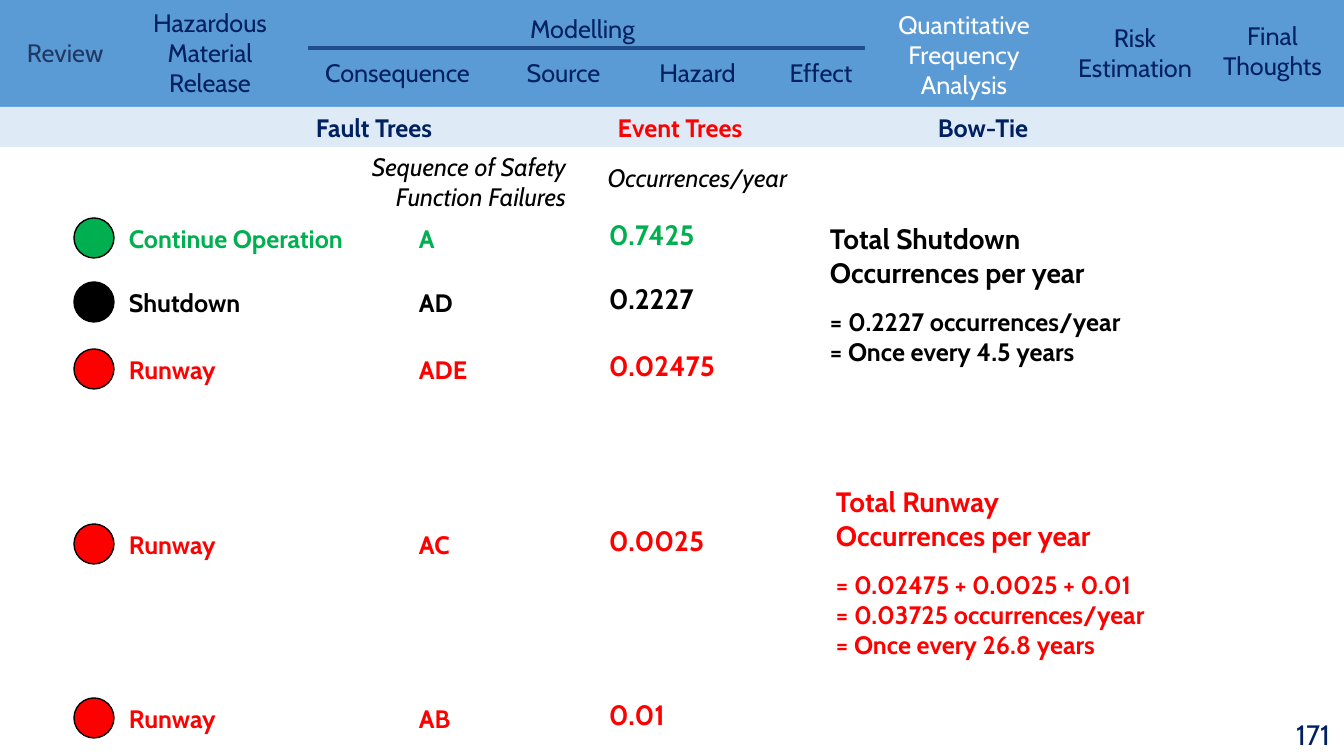
import pptx
import pptx.dml.color
import pptx.enum.shapes
import pptx.enum.text
import pptx.oxml
import pptx.util
import lxml.etree

NAVY, GREEN, BLACK, RED, WHITE = "002060", "00B050", "000000", "FF0000", "FFFFFF"
SLIDE_WIDTH, SLIDE_HEIGHT = 1344, 756
EMU_PER_PX = 12192000 / SLIDE_WIDTH

MENU = [
    ("Review", (17, 32, 112, 40), "203864", "LEFT"),
    ("Hazardous Material Release", (128, 2, 164, 101), NAVY, "CENTER"),
    ("Modelling", (308, 8, 549, 40), NAVY, "CENTER"),
    ("Consequence", (308, 52, 179, 40), NAVY, "CENTER"),
    ("Source", (463, 52, 201, 40), NAVY, "CENTER"),
    ("Hazard", (615, 52, 165, 40), NAVY, "CENTER"),
    ("Effect", (733, 52, 176, 40), NAVY, "CENTER"),
    ("Quantitative Frequency Analysis", (876, 4, 176, 97), WHITE, "CENTER"),
    ("Risk Estimation", (1047, 17, 176, 70), NAVY, "CENTER"),
    ("Final Thoughts", (1194, 15, 157, 75), NAVY, "CENTER"),
]
TABS = [("Fault Trees", 374, NAVY), ("Event Trees", 680, RED), ("Bow-Tie", 983, NAVY)]
HEADINGS = [
    ("Sequence of Safety Function Failures", (330, 146, 246, 72)),
    ("Occurrences/year", (551, 157, 246, 40)),
]
OUTCOMES = [
    (218, "Continue Operation", "A", "0.7425", GREEN),
    (282, "Shutdown", "AD", "0.2227", BLACK),
    (349, "Runway", "ADE", "0.02475", RED),
    (524, "Runway", "AC", "0.0025", RED),
    (698, "Runway", "AB", "0.01", RED),
]
TOTALS = [
    ("Total Shutdown\vOccurrences per year",
     "= 0.2227 occurrences/year\v= Once every 4.5 years",
     (820, 217, 510, 156), BLACK),
    ("Total Runway\vOccurrences per year",
     "= 0.02475 + 0.0025 + 0.01\v= 0.03725 occurrences/year\v= Once every 26.8 years",
     (826, 480, 505, 186), RED),
]


def px(length):
    return pptx.util.Emu(round(length * EMU_PER_PX))


def colour(value):
    return pptx.dml.color.RGBColor.from_string(value)


def style_span(span, value, size=18, **extra):
    formats = {"name": "Cabin", "size": pptx.util.Pt(size), **extra}
    for name, setting in formats.items():
        setattr(span.font, name, setting)
    span.font.color.rgb = colour(value)


def add_text(page, place, paragraphs, value, align="LEFT", anchor="TOP", after=0, **extra):
    box = page.shapes.add_textbox(*map(px, place))
    frame = box.text_frame
    frame.word_wrap = True
    frame.vertical_anchor = getattr(pptx.enum.text.MSO_ANCHOR, anchor)
    for index, (text, size) in enumerate(paragraphs):
        para = frame.add_paragraph() if index else frame.paragraphs[0]
        para.text = text
        para.alignment = getattr(pptx.enum.text.PP_ALIGN, align)
        para.space_after = pptx.util.Pt(after)
        for span in para.runs:
            style_span(span, value, size, **extra)


def add_block(page, kind, place, fill, outline=None):
    block = page.shapes.add_shape(getattr(pptx.enum.shapes.MSO_SHAPE, kind), *map(px, place))
    block.shadow.inherit = False
    block.fill.solid()
    block.fill.fore_color.rgb = colour(fill)
    if outline:
        block.line.color.rgb = colour(outline)
        block.line.width = pptx.util.Pt(1)
    else:
        block.line.fill.background()
    return block


def add_menu(page):
    add_block(page, "RECTANGLE", (0, 0, SLIDE_WIDTH, 107), "5B9BD5")
    for text, place, value, align in MENU:
        add_text(page, place, [(text, 18)], value, align)
    rule = page.shapes.add_connector(
        pptx.enum.shapes.MSO_CONNECTOR.STRAIGHT, px(308), px(48), px(865), px(48))
    rule.line.color.rgb = colour("224D8C")
    rule.line.width = pptx.util.Pt(2.25)
    lxml.etree.SubElement(rule.element.spPr, pptx.oxml.ns.qn("a:effectLst"))


def add_tabs(page):
    bar = add_block(page, "RECTANGLE", (0, 107, SLIDE_WIDTH, 40), "DEEBF7")
    bar.text_frame.margin_left = 0
    para = bar.text_frame.paragraphs[0]
    para.alignment = pptx.enum.text.PP_ALIGN.LEFT
    stops = lxml.etree.SubElement(para._p.get_or_add_pPr(), pptx.oxml.ns.qn("a:tabLst"))
    for text, centre, value in TABS:
        lxml.etree.SubElement(stops, pptx.oxml.ns.qn("a:tab"), pos=str(px(centre)), algn="ctr")
        span = para.add_run()
        span.text = "\t" + text
        style_span(span, value, bold=True)


def add_outcomes(page):
    for text, place in HEADINGS:
        add_text(page, place, [(text, 18)], BLACK, "RIGHT", after=12, italic=True)
    for top, outcome, failures, rate, value in OUTCOMES:
        add_block(page, "OVAL", (74, top, 40, 40), value, BLACK)
        cells = [
            (outcome, 18, (119, top, 287, 40)),
            (failures, 18, (409, top, 118, 40)),
            (rate, 20, (599, top - 5, 190, 44)),
        ]
        for text, size, place in cells:
            add_text(page, place, [(text, size)], value, after=12, bold=True)
    for title, result, place, value in TOTALS:
        add_text(page, place, [(title, 20), (result, 18)], value, after=12, bold=True)


def main():
    deck = pptx.Presentation()
    deck.slide_width, deck.slide_height = px(SLIDE_WIDTH), px(SLIDE_HEIGHT)
    page = deck.slides.add_slide(deck.slide_layouts[6])
    add_menu(page)
    add_tabs(page)
    add_outcomes(page)
    add_text(page, (1027, 714, 313, 40), [("171", 20)], NAVY, "RIGHT", "MIDDLE")
    deck.save("out.pptx")


if __name__ == "__main__":
    main()
